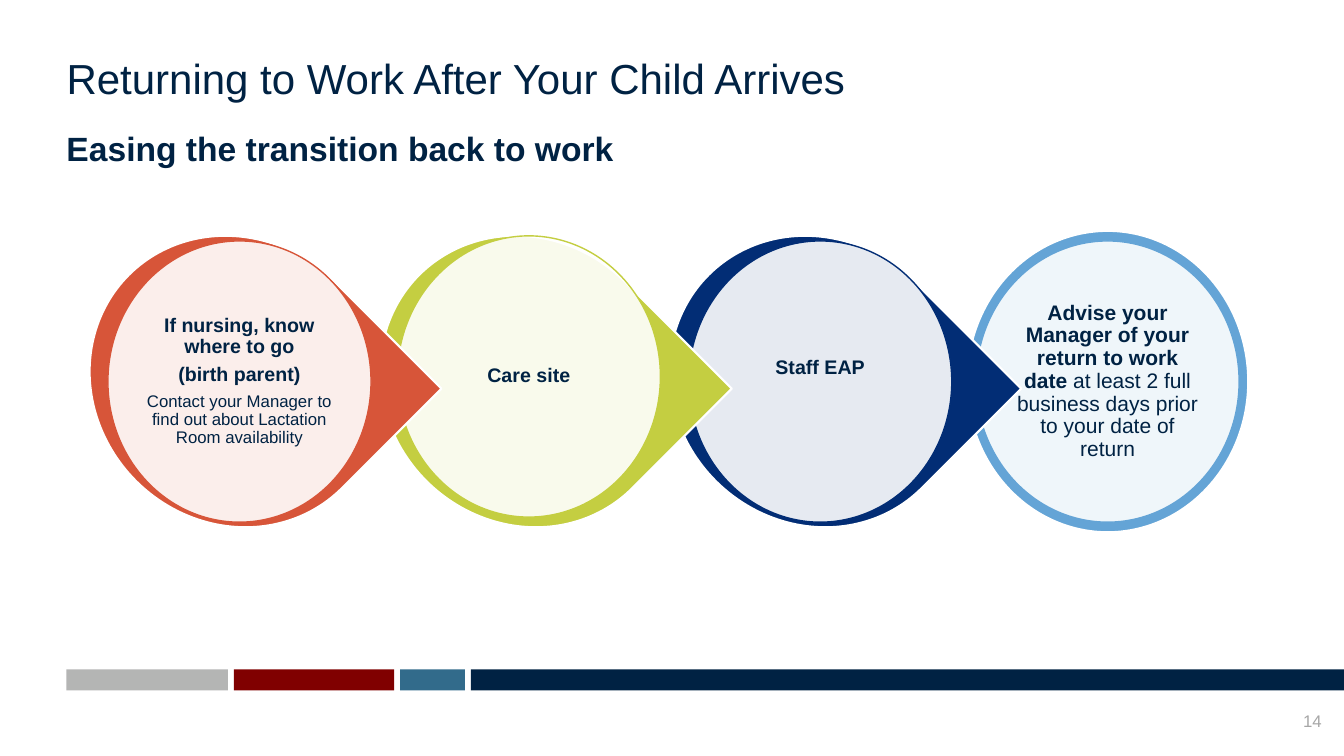
import pptx
import pptx.util
import pptx.dml.color
import pptx.enum.shapes
import pptx.enum.text
from lxml import etree

PX = 9144  # 100 px to the inch
INK = {
    "navy": "002243", "steel": "326B8B", "maroon": "800000", "gray": "B4B5B4",
    "pale": "A6A6A6", "white": "FFFFFF", "sky": "64A4D6", "blue": "022D75",
    "lime": "C4CE41", "rust": "D75539",
}
KIND = pptx.enum.shapes.MSO_SHAPE
ALIGN = pptx.enum.text.PP_ALIGN
ANCHOR = pptx.enum.text.MSO_ANCHOR

deck = pptx.Presentation()
deck.slide_width, deck.slide_height = 1333 * PX, 750 * PX
slide = deck.slides.add_slide(deck.slide_layouts[6])


def draw(kind, box, fill, line=None, width=1):
    """Add a shape, or a text box when kind is None, with no text margins."""
    area = [n * PX for n in box]
    if kind is None:
        shape = slide.shapes.add_textbox(*area)
    else:
        shape = slide.shapes.add_shape(kind, *area)
        shape.shadow.inherit = False
        shape.fill.solid()
        shape.fill.fore_color.rgb = pptx.dml.color.RGBColor.from_string(INK[fill])
        if line:
            shape.line.color.rgb = pptx.dml.color.RGBColor.from_string(INK[line])
            shape.line.width = pptx.util.Pt(width)
        else:
            shape.line.fill.background()
    frame = shape.text_frame
    frame.word_wrap = True
    frame.margin_left = frame.margin_right = 0
    frame.margin_top = frame.margin_bottom = 0
    return shape


def write(para, text, size, color="navy", bold=False, align=ALIGN.LEFT,
          space=1.0, after=0):
    """Add a run to a paragraph and set the paragraph's layout."""
    para.alignment = align
    para.line_spacing = space
    para.space_after = pptx.util.Pt(after)
    run = para.add_run()
    run.text = text
    run.font.name = "Arial"
    run.font.size = pptx.util.Pt(size)
    run.font.bold = bold
    run.font.color.rgb = pptx.dml.color.RGBColor.from_string(INK[color])


# Footer bars and page number
for left, width, color in [(467, 866, "navy"), (397, 64, "steel"),
                           (232, 159, "maroon"), (66, 160, "gray")]:
    draw(KIND.RECTANGLE, (left, 664, width, 21), color)

page = draw(None, (1277, 705, 34, 20), None).text_frame
page.vertical_anchor = ANCHOR.BOTTOM
write(page.paragraphs[0], "14", 12, color="pale", align=ALIGN.RIGHT)

# Headings
title = draw(None, (66, 52, 1211, 50), None).text_frame
write(title.paragraphs[0], "Returning to Work After Your Child Arrives", 30)
lead = draw(None, (66, 134, 914, 40), None).text_frame
write(lead.paragraphs[0], "Easing the transition back to work", 24,
      bold=True, space=0.83, after=2)

# Steps, from the last to the first, so that each tip covers the next ring.
# Each: color, back kind, back box, disc left, disc top, bottom margin,
# paragraphs of (text, size, bold) runs
DROP = KIND.TEAR
steps = [
    ("sky", KIND.OVAL, (959, 229, 279, 299), 968, 239, 0, [
        [("Advise your Manager of your return to work date ", 15, True),
         ("at least 2 full business days prior to your date of return", 15, False)]]),
    ("blue", DROP, (659, 239, 299, 279), 683, 239, 26, [
        [("Staff EAP", 14, True)]]),
    ("lime", DROP, (372, 239, 299, 279), 394, 234, 0, [
        [("Care site", 14, True)]]),
    ("rust", DROP, (84, 239, 299, 279), 107, 239, 0, [
        [("If nursing, know where to go", 14, True)],
        [("(birth parent)", 14, True)],
        [("Contact your Manager to find out about Lactation Room availability",
          12, False)]]),
]
for color, kind, box, left, top, foot, paras in steps:
    back = draw(kind, box, color, line="white", width=1.5)
    if kind == DROP:
        back.rotation = 45
    disc = draw(KIND.OVAL, (left, top, 261, 279), "white", line=color)
    tint = disc.fill._xPr.find(".//" + pptx.oxml.ns.qn("a:srgbClr"))
    etree.SubElement(tint, pptx.oxml.ns.qn("a:alpha"), val="90000")
    frame = disc.text_frame
    frame.vertical_anchor = ANCHOR.MIDDLE
    frame.margin_bottom = foot * PX
    for i, runs in enumerate(paras):
        para = frame.add_paragraph() if i else frame.paragraphs[0]
        for text, size, bold in runs:
            write(para, text, size, bold=bold, align=ALIGN.CENTER,
                  space=0.9, after=5)

deck.save("out.pptx")
